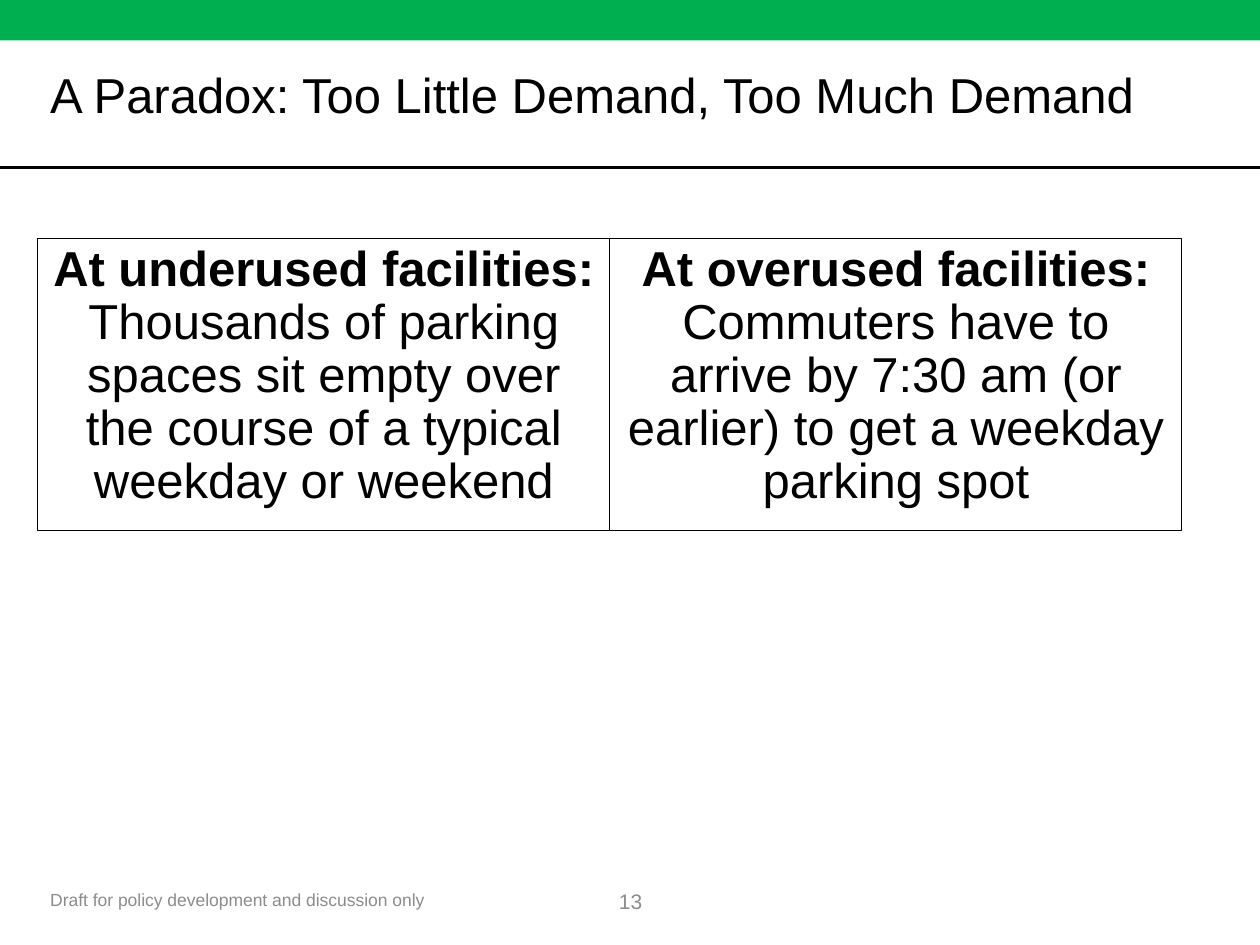
from dataclasses import dataclass

from lxml import etree
from pptx import Presentation, util as u
from pptx.dml.color import RGBColor
from pptx.enum import shapes, text
from pptx.oxml.ns import qn


@dataclass(frozen=True)
class Theme:
    """Colours, font and type sizes."""
    green: str = "00B050"
    black: str = "000000"
    gray: str = "8C8C8C"
    font: str = "Arial"
    head: int = 28
    page: int = 12
    foot: int = 10


class Deck:
    """Style and current slide."""

    def __init__(self, theme):
        self.theme = theme
        self.prs = Presentation()
        self.prs.slide_width, self.prs.slide_height = u.Inches(10), u.Inches(7.5)
        self.slide = self.prs.slides.add_slide(self.prs.slide_layouts[6])

    def rect(self, box, fill=None, line=None):
        """Add a plain rectangle."""
        shape = self.slide.shapes.add_shape(
            shapes.MSO_SHAPE.RECTANGLE, *map(u.Inches, box))
        shape.shadow.inherit = False
        for part, color in ((shape.fill, fill), (shape.line.fill, line)):
            if color:
                part.solid()
                part.fore_color.rgb = RGBColor.from_string(color)
            else:
                part.background()
        if line:
            shape.line.width = u.Pt(0.75)
        return shape

    def rule(self, y):
        """Add a line across the slide."""
        line = self.slide.shapes.add_connector(
            shapes.MSO_CONNECTOR.STRAIGHT, 0, u.Inches(y),
            self.prs.slide_width, u.Inches(y))
        line.line.color.rgb = RGBColor.from_string(self.theme.black)
        line.line.width = u.Pt(1.5)
        etree.SubElement(line._element.spPr, qn("a:effectLst"))

    def put(self, shape, runs, size, color, anchor, **form):
        """Fill a shape with one paragraph of (words, bold) runs."""
        frame = shape.text_frame
        frame.word_wrap = True
        frame.vertical_anchor = anchor
        para = frame.paragraphs[0]
        for key, value in form.items():
            setattr(para, key, value)
        look = {"name": self.theme.font, "size": u.Pt(size)}
        for words, bold in runs:
            run = para.add_run()
            run.text = words
            for key, value in (look | {"bold": bold}).items():
                setattr(run.font, key, value)
            run.font.color.rgb = RGBColor.from_string(color)

    def label(self, box, words, size, color, **form):
        """Add a text box centred in height."""
        shape = self.slide.shapes.add_textbox(*map(u.Inches, box))
        self.put(shape, [(words, False)], size, color,
                 text.MSO_ANCHOR.MIDDLE, **form)

    def panel(self, box, head, body):
        """Add an outlined box with a bold lead-in."""
        t = self.theme
        self.put(self.rect(box, line=t.black), [(head, True), (body, False)],
                 t.head, t.black, text.MSO_ANCHOR.TOP,
                 alignment=text.PP_ALIGN.CENTER, line_spacing=0.9)


def main():
    """Build the slide."""
    t = Theme()
    deck = Deck(t)
    left, wide = 0.3, 4.54
    deck.rect((0, 0, 10, 0.32), fill=t.green)
    deck.label((left, 6.94, 3.19, 0.4),
               "Draft for policy development and discussion only", t.foot, t.gray)
    deck.rule(1.33)
    deck.label((left, 0.4, 9.7, 0.75),
               "A Paradox: Too Little Demand, Too Much Demand",
               t.head, t.black, line_spacing=0.9)
    panels = (
        ("At underused facilities: ",
         "Thousands of parking spaces sit empty over the course of "
         "a typical weekday or weekend"),
        ("At overused facilities: ",
         "Commuters have to arrive by 7:30 am (or earlier) to get "
         "a weekday parking spot"),
    )
    for i, (head, body) in enumerate(panels):
        deck.panel((left + i * wide, 1.89, wide, 2.32), head, body)
    deck.label((3.88, 6.95, 2.25, 0.4), "13", t.page, t.gray,
               alignment=text.PP_ALIGN.CENTER)
    deck.prs.save("out.pptx")


if __name__ == "__main__":
    main()
